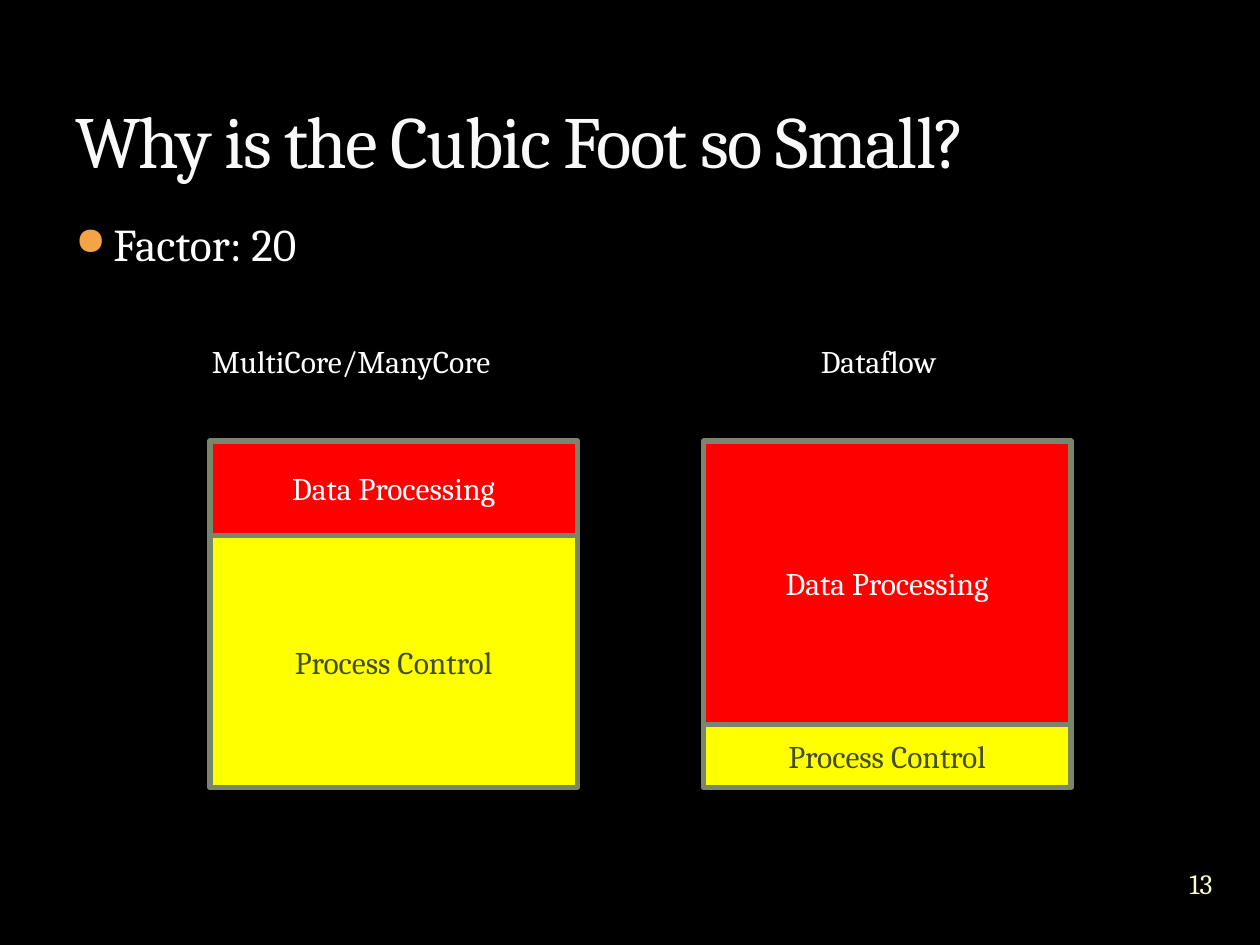
from lxml import etree
from pptx import Presentation, util as u
from pptx.dml.color import RGBColor
from pptx.enum import shapes, text
from pptx.oxml.ns import qn

PX = 9525  # 96 px to the inch
COLORS = {
    "background": "000000", "title": "F9F9F9", "white": "FFFFFF",
    "bullet": "F3A447", "number": "FEFAC9", "border": "7A866C",
    "red": "FF0000", "yellow": "FFFF00", "dark": "444D26",
}


def write(shape, words, size=18, color="white", align=text.PP_ALIGN.LEFT,
          anchor=text.MSO_ANCHOR.TOP, wrap=True):
    """Fill the shape with one formatted paragraph and return it."""
    frame = shape.text_frame
    frame.word_wrap = wrap
    frame.vertical_anchor = anchor
    paragraph = frame.paragraphs[0]
    paragraph.alignment = align
    run = paragraph.add_run()
    run.text = words
    run.font.name = "Cambria"
    run.font.size = u.Pt(size)
    run.font.color.rgb = RGBColor.from_string(COLORS[color])
    return paragraph


def emu(*lengths):
    return [length * PX for length in lengths]


prs = Presentation()
prs.slide_width, prs.slide_height = emu(960, 720)
slide = prs.slides.add_slide(prs.slide_layouts[6])
slide.background.fill.solid()
slide.background.fill.fore_color.rgb = RGBColor.from_string(COLORS["background"])

# Bulleted statement
statement = slide.shapes.add_textbox(*emu(48, 160, 864, 480))
factor = write(statement, "Factor: 20", size=26)
factor.space_before = u.Pt(6)
props = factor._p.get_or_add_pPr()
props.set("marL", str(29 * PX))
props.set("indent", str(-29 * PX))
bullet_color = etree.SubElement(props, qn("a:buClr"))
etree.SubElement(bullet_color, qn("a:srgbClr"), val=COLORS["bullet"])
etree.SubElement(props, qn("a:buSzPct"), val="85000")
etree.SubElement(props, qn("a:buChar"), char="●")

# Title
title = slide.shapes.add_textbox(*emu(48, 16, 864, 128))
heading = write(title, "Why is the Cubic Foot so Small?", size=42,
                color="title", anchor=text.MSO_ANCHOR.BOTTOM)
heading.runs[0].font._element.set("spc", "-100")

# Two stacks of equal height, split differently
STACK_TOP, STACK_WIDTH, STACK_HEIGHT = 336, 280, 264
for stack_left, data_height in ((160, 72), (536, 216)):
    top = STACK_TOP
    for label, height, fill, ink in (
        ("Data Processing", data_height, "red", "white"),
        ("Process Control", STACK_HEIGHT - data_height, "yellow", "dark"),
    ):
        share = slide.shapes.add_shape(
            shapes.MSO_SHAPE.RECTANGLE, *emu(stack_left, top, STACK_WIDTH, height))
        share.shadow.inherit = False
        share.fill.solid()
        share.fill.fore_color.rgb = RGBColor.from_string(COLORS[fill])
        share.line.color.rgb = RGBColor.from_string(COLORS["border"])
        share.line.width = u.Pt(3)
        write(share, label, color=ink, align=text.PP_ALIGN.CENTER,
              anchor=text.MSO_ANCHOR.MIDDLE)
        top += height

# Stack captions
for caption, left, width in (("MultiCore/ManyCore", 152, 256), ("Dataflow", 616, 144)):
    write(slide.shapes.add_textbox(*emu(left, 256, width, 38)), caption)

# Slide number
number = slide.shapes.add_textbox(*emu(883, 649, 64, 48))
frame = number.text_frame
frame.margin_left = frame.margin_right = frame.margin_top = frame.margin_bottom = 0
write(number, "13", size=16, color="number", align=text.PP_ALIGN.CENTER,
      anchor=text.MSO_ANCHOR.MIDDLE)

prs.save("out.pptx")
